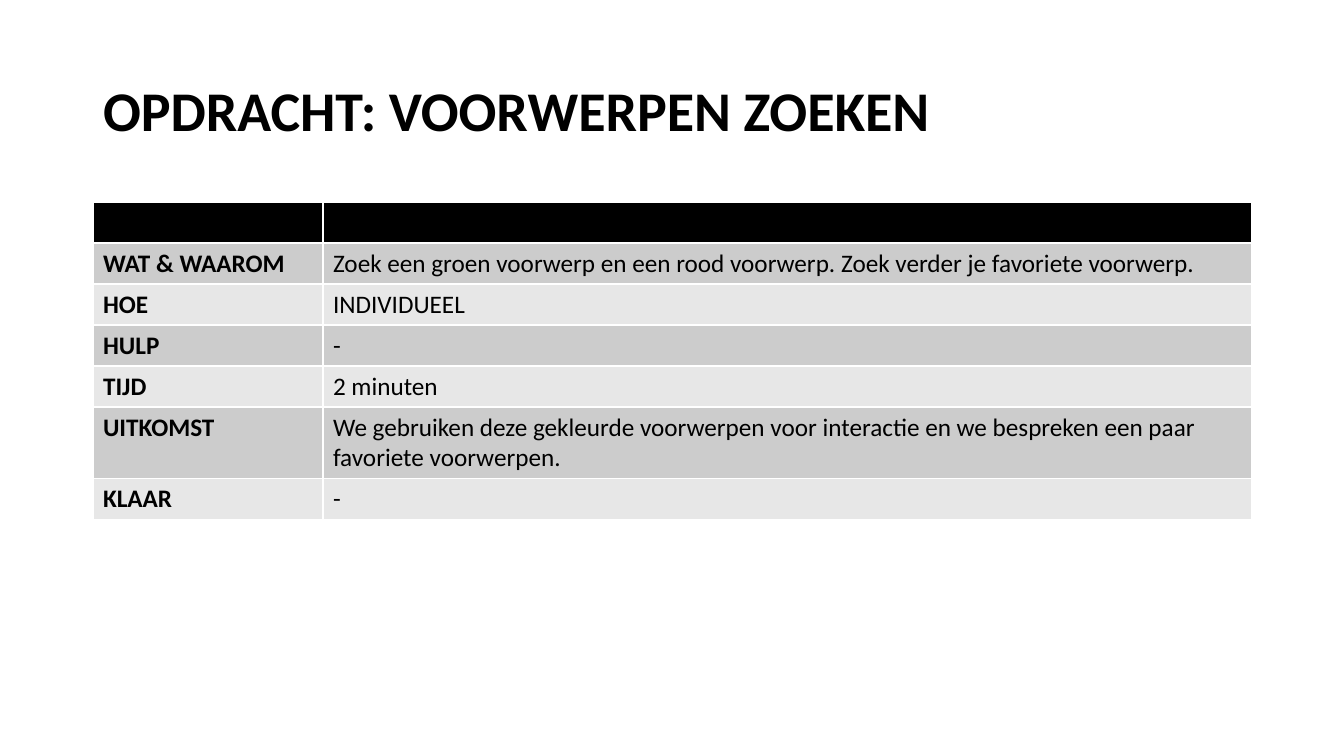
from pptx import Presentation
from pptx.dml.color import RGBColor
from pptx.enum.text import MSO_ANCHOR, PP_ALIGN
from pptx.util import Pt

TITLE = "OPDRACHT: VOORWERPEN ZOEKEN"
ROWS = [
    ("", ""),
    ("WAT & WAAROM", "Zoek een groen voorwerp en een rood voorwerp. Zoek verder je favoriete voorwerp."),
    ("HOE", "INDIVIDUEEL"),
    ("HULP", "-"),
    ("TIJD", "2 minuten"),
    ("UITKOMST", "We gebruiken deze gekleurde voorwerpen voor interactie "
                 "en we bespreken een paar favoriete voorwerpen."),
    ("KLAAR", "-"),
]

BLACK = RGBColor(0x00, 0x00, 0x00)
DARK_BAND = RGBColor(0xCC, 0xCC, 0xCC)
LIGHT_BAND = RGBColor(0xE7, 0xE7, 0xE7)
FONT = "Calibri"

SLIDE_W, SLIDE_H = 1344, 756
LEFT, WIDTH = 93, 1159
TITLE_TOP, TITLE_H = 40, 146
TABLE_TOP, ROW_H = 202, 41
LABEL_W = 230


def px(n):
    return round(n * 914400 / 100.8)


def write(tf, text, size=18, bold=False, spacing=1.0):
    p = tf.paragraphs[0]
    p.alignment = PP_ALIGN.LEFT
    p.line_spacing = spacing
    p.font.size = Pt(size)
    if text:
        r = p.add_run()
        r.text = text
        r.font.name = FONT
        r.font.size = Pt(size)
        r.font.bold = bold
        r.font.color.rgb = BLACK


def add_title(slide):
    sp = slide.shapes.title
    sp.left, sp.top = px(LEFT), px(TITLE_TOP)
    sp.width, sp.height = px(WIDTH), px(TITLE_H)
    sp.text_frame.vertical_anchor = MSO_ANCHOR.MIDDLE
    write(sp.text_frame, TITLE, size=40, bold=True, spacing=0.9)


def add_assignment_table(slide):
    table = slide.shapes.add_table(len(ROWS), 2, px(LEFT), px(TABLE_TOP),
                                   px(WIDTH), px(ROW_H * len(ROWS))).table
    table.columns[0].width = px(LABEL_W)
    table.columns[1].width = px(WIDTH - LABEL_W)
    for i, row in enumerate(ROWS):
        table.rows[i].height = px(ROW_H)
        band = DARK_BAND if i % 2 else LIGHT_BAND
        for j, text in enumerate(row):
            cell = table.cell(i, j)
            cell.fill.solid()
            cell.fill.fore_color.rgb = band if i else BLACK
            write(cell.text_frame, text, bold=j == 0)


def main():
    prs = Presentation()
    prs.slide_width, prs.slide_height = px(SLIDE_W), px(SLIDE_H)
    slide = prs.slides.add_slide(prs.slide_layouts[5])
    add_title(slide)
    add_assignment_table(slide)
    prs.save("out.pptx")


if __name__ == "__main__":
    main()
